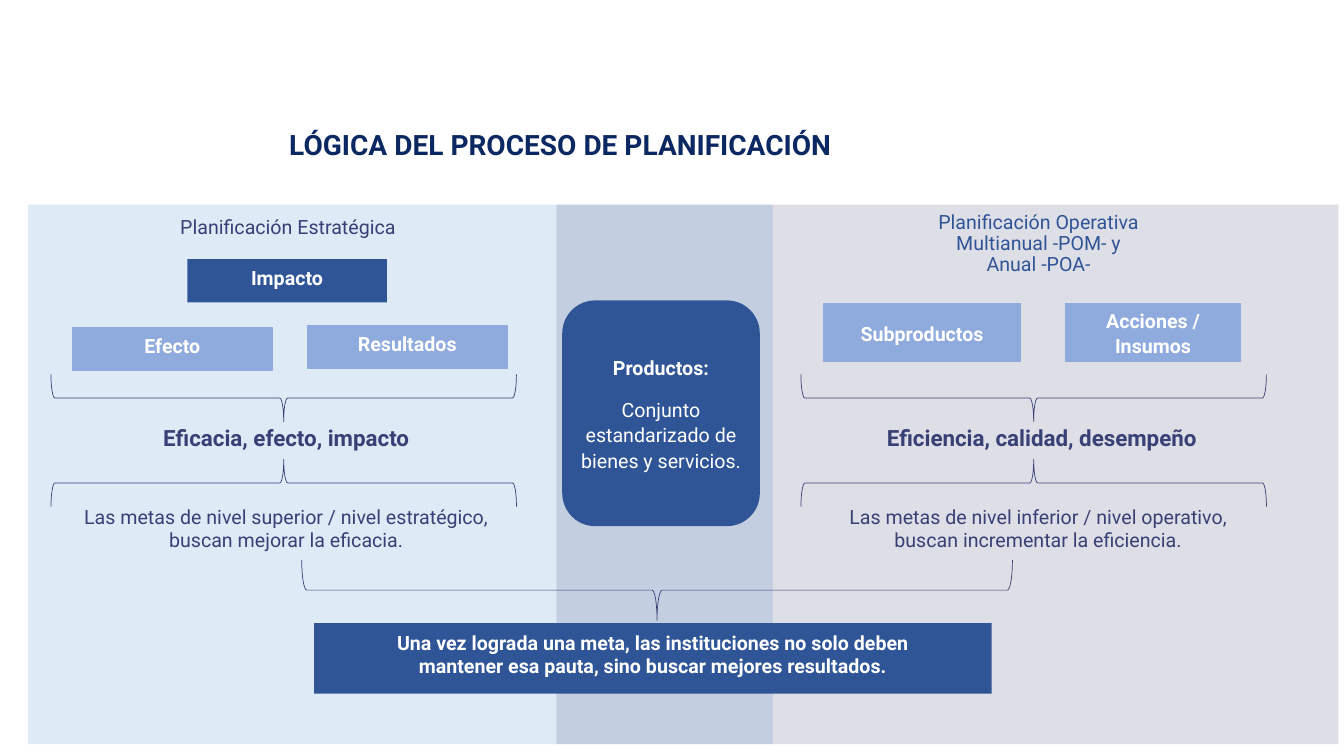
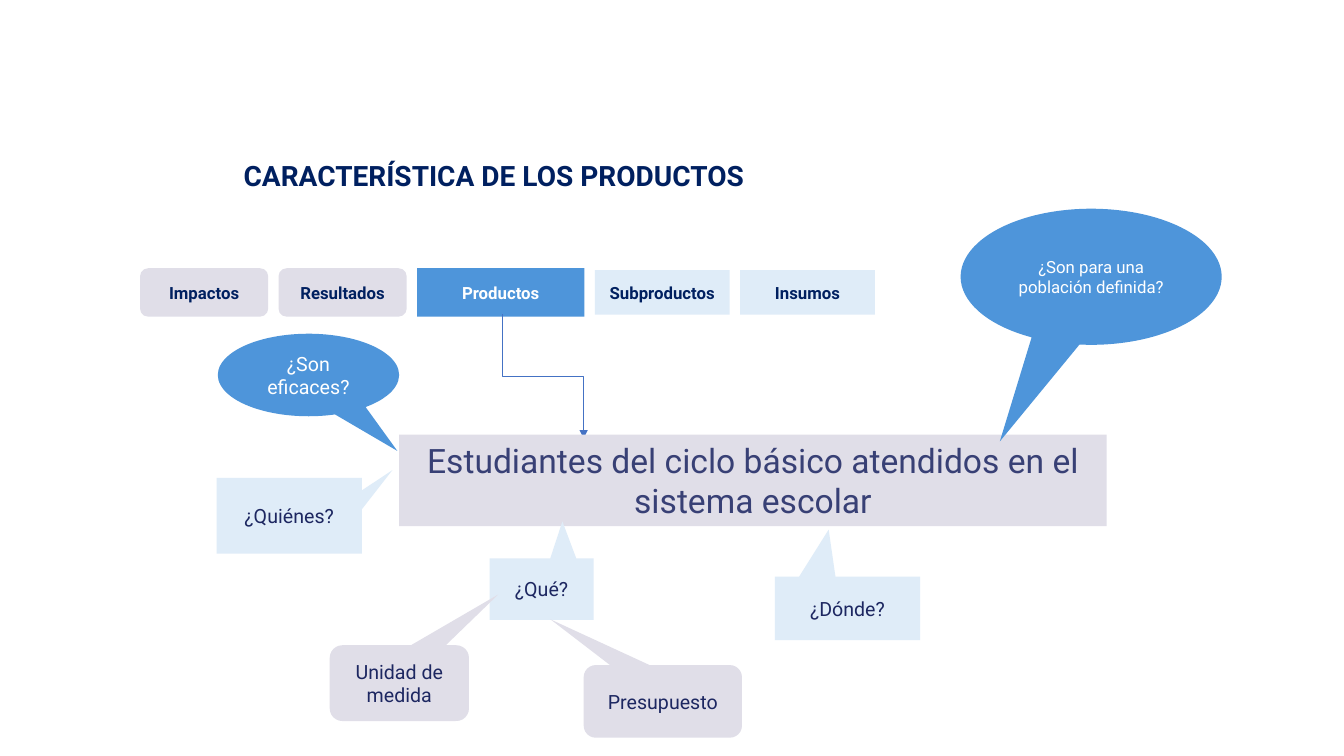
from dataclasses import dataclass, replace

from lxml.etree import SubElement
from pptx import Presentation
from pptx.dml.color import RGBColor
from pptx.enum.shapes import MSO_CONNECTOR, MSO_SHAPE
from pptx.enum.text import MSO_ANCHOR, PP_ALIGN
from pptx.oxml.ns import qn
from pptx.shapes.autoshape import Shape
from pptx.slide import Slide
from pptx.util import Cm, Pt

FONT = "Roboto"
WHITE = RGBColor(0xFF, 0xFF, 0xFF)
TITLE_BLUE = RGBColor(0x0C, 0x28, 0x62)
NAVY = RGBColor(0x00, 0x20, 0x60)
INK = RGBColor(0x1D, 0x27, 0x61)
INDIGO = RGBColor(0x38, 0x40, 0x75)
BLUE = RGBColor(0x2F, 0x55, 0x97)
SOFT_BLUE = RGBColor(0x8F, 0xAA, 0xDC)
BRIGHT_BLUE = RGBColor(0x4E, 0x95, 0xDA)
ICE = RGBColor(0xDE, 0xEB, 0xF7)
PALE_BLUE = RGBColor(0xDF, 0xEC, 0xF8)
LILAC = RGBColor(0xE0, 0xDE, 0xE8)
PURPLE = RGBColor(0x5D, 0x5B, 0x8A)
ARROW_BLUE = RGBColor(0x44, 0x72, 0xC4)

RECT = MSO_SHAPE.RECTANGLE
ROUND = MSO_SHAPE.ROUNDED_RECTANGLE
RECT_CALLOUT = MSO_SHAPE.RECTANGULAR_CALLOUT
ROUND_CALLOUT = MSO_SHAPE.ROUNDED_RECTANGULAR_CALLOUT
OVAL_CALLOUT = MSO_SHAPE.OVAL_CALLOUT


@dataclass(frozen=True)
class Style:
    size: float = 14
    color: RGBColor = INK
    bold: bool = False
    spacing: float = 1.0
    after: float = 0
    align: PP_ALIGN = PP_ALIGN.CENTER
    anchor: MSO_ANCHOR = MSO_ANCHOR.MIDDLE
    inset: float = 0.25


@dataclass(frozen=True)
class Box:
    """A block of text, in cm; without a kind it is a plain text box."""
    left: float
    top: float
    width: float
    height: float
    text: str = ""
    style: Style = Style()
    kind: MSO_SHAPE | None = None
    fill: RGBColor | None = None
    line: RGBColor | None = None
    tip: tuple[float, float] | None = None


TITLE = Style(20, TITLE_BLUE, True, 0.9, align=PP_ALIGN.LEFT,
              anchor=MSO_ANCHOR.TOP, inset=0.13)
LABEL = Style(14, WHITE, True, 1.07, 8)
TOP_LABEL = replace(LABEL, anchor=MSO_ANCHOR.TOP)
HEADING = Style(14, INDIGO, spacing=0.9, anchor=MSO_ANCHOR.TOP, inset=0.13)
CRITERIA = replace(TOP_LABEL, size=16, color=INDIGO)
GOAL = Style(14, INDIGO, False, 0.5, 8, anchor=MSO_ANCHOR.TOP)
CONCLUSION = Style(14, WHITE, True, 0.5, 8)
PRODUCT = Style(14, WHITE, spacing=1.07, after=12, inset=0)
STAGE = Style(12, NAVY, True, 1.07, 8)


def write(shape: Shape, text: str, style: Style) -> None:
    tf = shape.text_frame
    tf.text = text
    tf.word_wrap = True
    tf.vertical_anchor = style.anchor
    tf.margin_left = tf.margin_right = Cm(style.inset)
    for p in tf.paragraphs:
        p.alignment = style.align
        p.line_spacing = style.spacing
        p.space_after = Pt(style.after)
        for r in p.runs:
            r.font.name = FONT
            r.font.size = Pt(style.size)
            r.font.bold = style.bold
            r.font.color.rgb = style.color


def draw(s: Slide, box: Box) -> Shape:
    frame = [Cm(v) for v in (box.left, box.top, box.width, box.height)]
    if box.kind is None:
        sp = s.shapes.add_textbox(*frame)
    else:
        sp = s.shapes.add_shape(box.kind, *frame)
        sp.shadow.inherit = False
        sp.fill.solid()
        sp.fill.fore_color.rgb = box.fill
        if box.line is None:
            sp.line.fill.background()
        else:
            sp.line.color.rgb = box.line
            sp.line.width = Pt(0.75)
    if box.tip:
        sp.adjustments[0], sp.adjustments[1] = box.tip
    if box.text:
        write(sp, box.text, box.style)
    return sp


def set_alpha(sp: Shape, percent: int) -> None:
    color = sp.fill._xPr.find(qn("a:solidFill"))[0]
    SubElement(color, qn("a:alpha")).set("val", str(percent * 1000))


def brace(s: Slide, cx: float, cy: float, span: float, depth: float, rotation: int) -> None:
    """Horizontal brace centred on (cx, cy): 270 points down, 90 points up."""
    sp = s.shapes.add_shape(MSO_SHAPE.LEFT_BRACE, Cm(cx - depth / 2),
                            Cm(cy - span / 2), Cm(depth), Cm(span))
    sp.rotation = rotation
    sp.shadow.inherit = False
    sp.fill.background()
    sp.line.color.rgb = INDIGO
    sp.line.width = Pt(0.5)


def elbow_arrow(s: Slide, x1: float, y1: float, x2: float, y2: float) -> None:
    """Arrow that goes down, across and down again."""
    cx, cy = (x1 + x2) / 2, (y1 + y2) / 2
    half_w, half_h = (y2 - y1) / 2, (x2 - x1) / 2
    c = s.shapes.add_connector(MSO_CONNECTOR.ELBOW, Cm(cx + half_w), Cm(cy - half_h),
                               Cm(cx - half_w), Cm(cy + half_h))
    c.line.color.rgb = ARROW_BLUE
    c.line.width = Pt(0.5)
    sp_pr = c._element.spPr
    sp_pr.find(qn("a:xfrm")).set("rot", str(270 * 60000))
    SubElement(sp_pr.find(qn("a:ln")), qn("a:tailEnd")).set("type", "triangle")
    SubElement(sp_pr, qn("a:effectLst"))


def planning_logic(s: Slide) -> None:
    draw(s, Box(0.71, 5.16, 18.77, 13.59, kind=RECT, fill=ICE))
    operative_panel = draw(s, Box(14.02, 5.16, 19.71, 13.59, kind=RECT, fill=PURPLE))
    set_alpha(operative_panel, 20)

    product = draw(s, Box(14.17, 7.57, 4.98, 5.69,
                          "Productos:\nConjunto estandarizado de bienes y servicios.",
                          PRODUCT, ROUND, BLUE))
    product.text_frame.paragraphs[0].runs[0].font.bold = True

    for box in (
        Box(7.16, 3.18, 15.34, 1.27, "LÓGICA DEL PROCESO DE PLANIFICACIÓN", TITLE),
        Box(1.09, 5.36, 12.34, 1.07, "Planificación Estratégica", HEADING),
        Box(19.15, 5.23, 14.05, 1.75,
            "Planificación Operativa\nMultianual -POM- y\nAnual -POA-",
            replace(HEADING, color=BLUE)),
        Box(4.72, 6.53, 5.03, 1.09, "Impacto", TOP_LABEL, RECT, BLUE),
        Box(1.83, 8.26, 5.03, 1.07, "Efecto", TOP_LABEL, RECT, SOFT_BLUE, SOFT_BLUE),
        Box(7.75, 8.2, 5.03, 1.09, "Resultados", TOP_LABEL, RECT, SOFT_BLUE, SOFT_BLUE),
        Box(20.75, 7.65, 4.98, 1.47, "Subproductos", LABEL, RECT, SOFT_BLUE, SOFT_BLUE),
        Box(26.85, 7.65, 4.42, 1.47, "Acciones / Insumos", LABEL, RECT, SOFT_BLUE, SOFT_BLUE),
        Box(3.53, 10.52, 7.37, 1.07, "Eficacia, efecto, impacto", CRITERIA),
        Box(19.89, 10.52, 12.73, 1.07, "Eficiencia, calidad, desempeño", CRITERIA),
        Box(0.79, 12.85, 12.85, 1.63,
            "Las metas de nivel superior / nivel estratégico,\nbuscan mejorar la eficacia.",
            GOAL),
        Box(19.74, 12.85, 12.85, 1.63,
            "Las metas de nivel inferior / nivel operativo,\nbuscan incrementar la eficiencia.",
            GOAL),
        Box(7.92, 15.7, 17.07, 1.78,
            "Una vez lograda una meta, las instituciones no solo deben\n"
            "mantener esa pauta, sino buscar mejores resultados.",
            CONCLUSION, RECT, BLUE),
    ):
        draw(s, box)

    for cx in (7.15, 26.05):
        brace(s, cx, 10.03, 11.73, 1.19, 270)
        brace(s, cx, 12.17, 11.73, 1.19, 90)
    brace(s, 16.56, 14.87, 17.91, 1.52, 270)


def product_features(s: Slide) -> None:
    draw(s, Box(5.89, 3.86, 17.27, 1.12, "CARACTERÍSTICA DE LOS PRODUCTOS",
                replace(TITLE, color=NAVY, spacing=1.0, inset=0.25)))

    left, gap, middle = 3.53, 0.26, 7.37
    for text, width, height, kind, fill, color in (
        ("Impactos", 3.23, 1.22, ROUND, LILAC, NAVY),
        ("Resultados", 3.23, 1.22, ROUND, LILAC, NAVY),
        ("Productos", 4.22, 1.22, RECT, BRIGHT_BLUE, WHITE),
        ("Subproductos", 3.4, 1.12, RECT, PALE_BLUE, NAVY),
        ("Insumos", 3.4, 1.12, RECT, PALE_BLUE, NAVY),
    ):
        draw(s, Box(left, middle - height / 2, width, height, text,
                    replace(STAGE, color=color), kind, fill))
        left += width + gap

    elbow_arrow(s, 12.67, 7.92, 14.71, 11.05)

    answer = Style(color=WHITE)
    for box in (
        Box(10.06, 10.95, 17.83, 2.31,
            "Estudiantes del ciclo básico atendidos en el sistema escolar",
            Style(24, INDIGO), RECT, LILAC),
        Box(12.34, 14.07, 2.62, 1.55, "¿Qué?", kind=RECT_CALLOUT,
            fill=PALE_BLUE, tip=(0.2, -1.1)),
        Box(5.46, 12.04, 3.66, 1.91, "¿Quiénes?", kind=RECT_CALLOUT,
            fill=PALE_BLUE, tip=(0.71, -0.6)),
        Box(19.53, 14.53, 3.66, 1.6, "¿Dónde?", kind=RECT_CALLOUT,
            fill=PALE_BLUE, tip=(-0.13, -1.24)),
        Box(8.31, 16.26, 3.51, 1.91, "Unidad de medida", kind=ROUND_CALLOUT,
            fill=LILAC, tip=(0.71, -1.17)),
        Box(14.71, 16.76, 3.99, 1.83, "Presupuesto", kind=ROUND_CALLOUT,
            fill=LILAC, tip=(-0.71, -1.13)),
        Box(24.21, 5.26, 6.58, 3.43, "¿Son para una población definida?",
            replace(answer, size=12), OVAL_CALLOUT, BRIGHT_BLUE, tip=(-0.35, 1.21)),
        Box(5.49, 8.41, 4.57, 2.08, "¿Son eficaces?", answer,
            OVAL_CALLOUT, BRIGHT_BLUE, tip=(0.49, 0.92)),
    ):
        draw(s, box)


def main() -> None:
    prs = Presentation()
    prs.slide_width, prs.slide_height = Cm(33.87), Cm(19.05)
    blank = prs.slide_layouts[6]
    for build in (planning_logic, product_features):
        build(prs.slides.add_slide(blank))
    prs.save("out.pptx")


if __name__ == "__main__":
    main()
